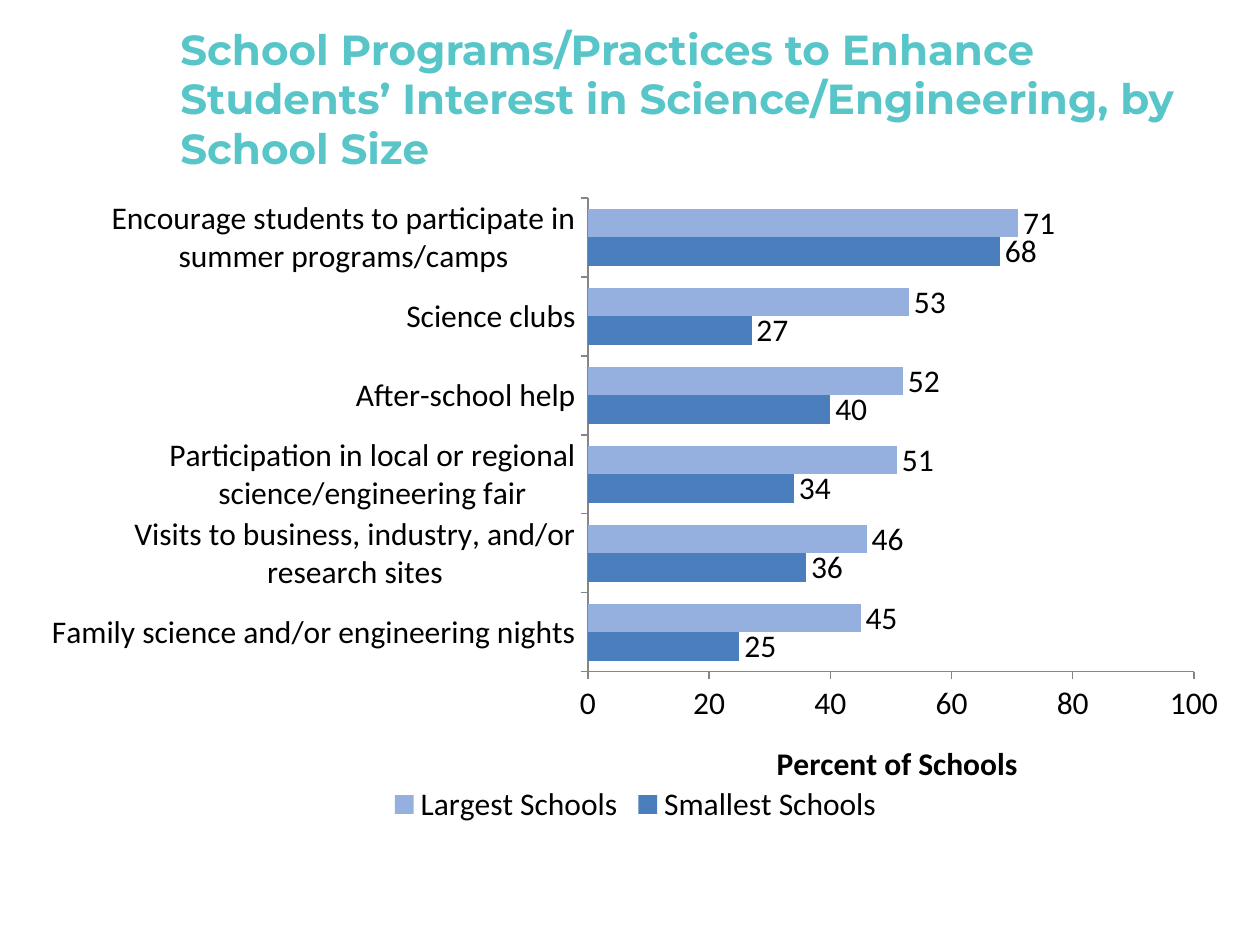
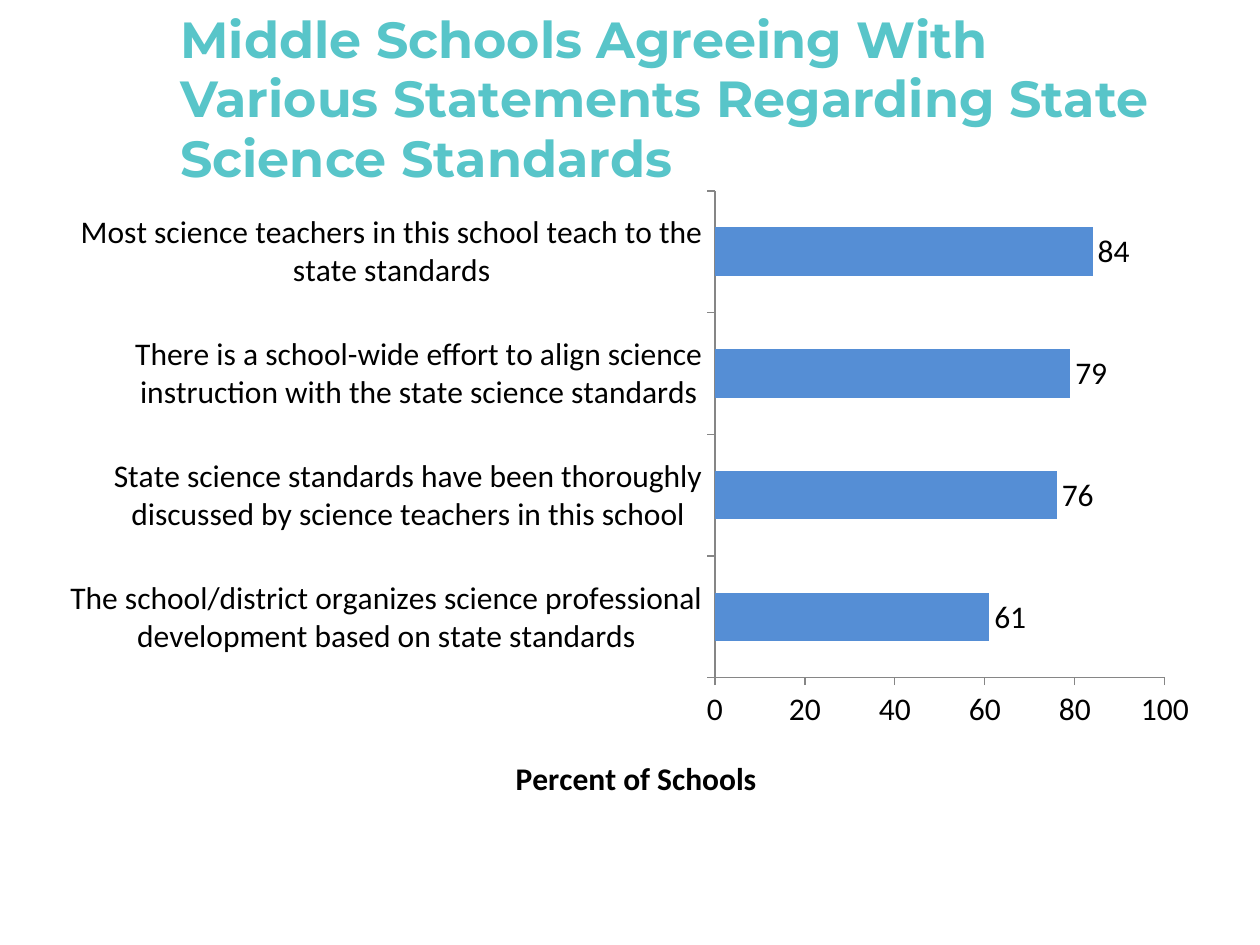
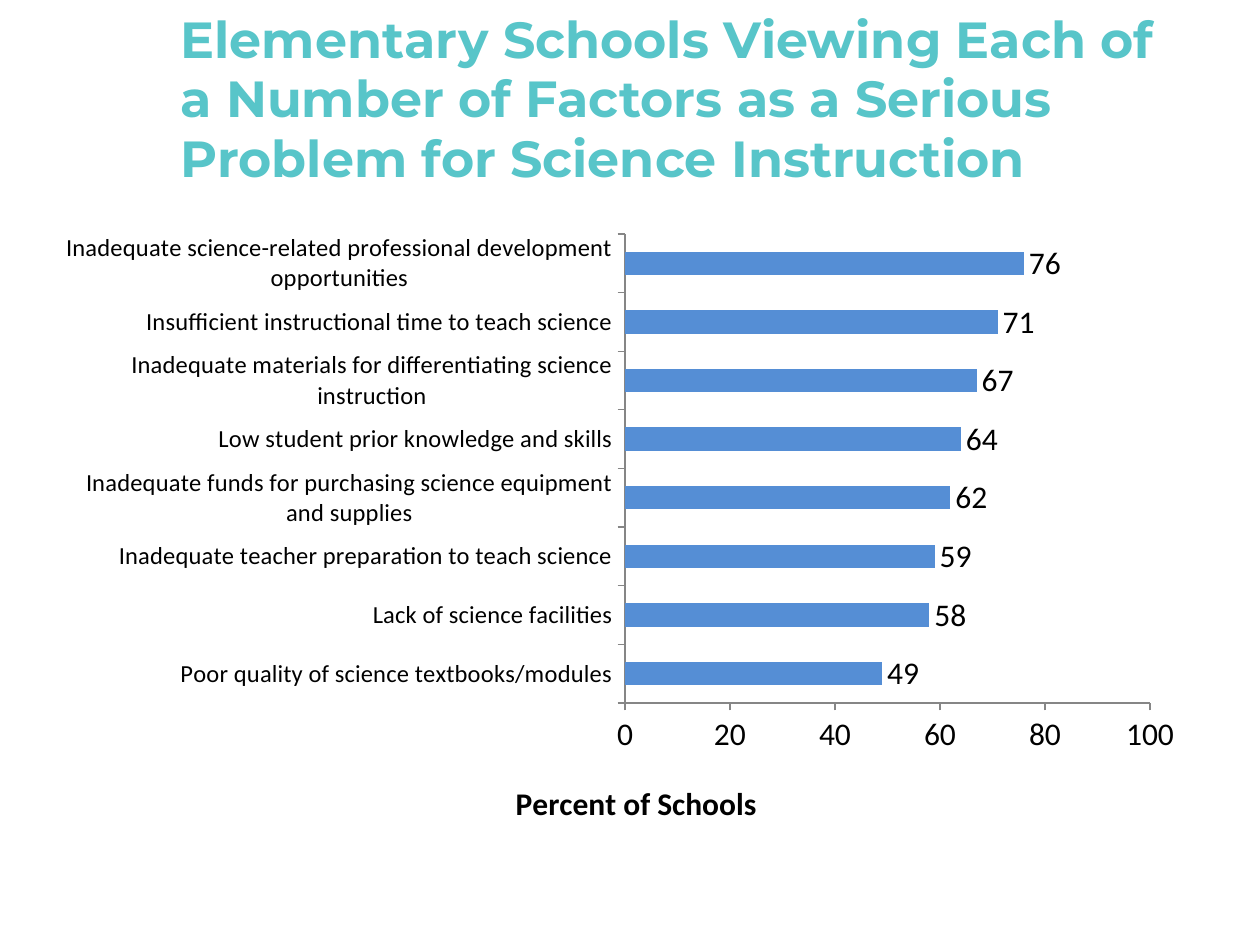
from pptx import Presentation
from pptx.chart.data import CategoryChartData
from pptx.dml.color import RGBColor
from pptx.enum.chart import (XL_CHART_TYPE as CT, XL_LABEL_POSITION as LP,
                             XL_LEGEND_POSITION as LEG, XL_TICK_MARK as TM)
from pptx.enum.text import MSO_ANCHOR
from pptx.oxml import parse_xml
from pptx.oxml.ns import nsdecls, qn
from pptx.util import Emu, Pt

TEAL = RGBColor(0x58, 0xC5, 0xC9)
BLACK = RGBColor(0x00, 0x00, 0x00)
GREY = RGBColor(0x86, 0x86, 0x86)
BLUE = RGBColor(0x55, 0x8E, 0xD5)
DARK_BLUE = RGBColor(0x4A, 0x7E, 0xBD)
LIGHT_BLUE = RGBColor(0x95, 0xB0, 0xDF)

TITLE_FONT, CHART_FONT = "Montserrat", "Calibri"
TITLE_BOX = (168, 21, 1029, 158)

SLIDES = [
    dict(
        title="School Programs/Practices to Enhance Students’ Interest in "
              "Science/Engineering, by School Size",
        title_size=24, box=(42, 179, 1187, 651), plot=(546, 19, 606, 474),
        axis_title_at=(729, 557), label_size=18, gap=75, legend=True,
        categories=[
            "Family science and/or engineering nights",
            "Visits to business, industry, and/or research sites",
            "Participation in local or regional science/engineering fair",
            "After-school help",
            "Science clubs",
            "Encourage students to participate in summer programs/camps",
        ],
        series=[("Smallest Schools", [25, 36, 34, 40, 27, 68], DARK_BLUE),
                ("Largest Schools", [45, 46, 51, 52, 53, 71], LIGHT_BLUE)],
    ),
    dict(
        title="Middle Schools Agreeing With Various Statements Regarding "
              "State Science Standards",
        title_size=29, box=(48, 179, 1166, 640), plot=(667, 12, 450, 487),
        axis_title_at=(462, 572), label_size=18, gap=150, legend=False,
        categories=[
            "The school/district organizes science professional development "
            "based on state standards",
            "State science standards have been thoroughly discussed by "
            "science teachers in this school",
            "There is a school-wide effort to align science instruction with "
            "the state science standards",
            "Most science teachers in this school teach to the state standards",
        ],
        series=[("Series 1", [61, 76, 79, 84], BLUE)],
    ),
    dict(
        title="Elementary Schools Viewing Each of a Number of Factors as a "
              "Serious Problem for Science Instruction",
        title_size=29, box=(63, 221, 1134, 624), plot=(562, 13, 525, 469),
        axis_title_at=(447, 555), label_size=14, gap=150, legend=False,
        categories=[
            "Poor quality of science textbooks/modules",
            "Lack of science facilities",
            "Inadequate teacher preparation to teach science",
            "Inadequate funds for purchasing science equipment and supplies",
            "Low student prior knowledge and skills",
            "Inadequate materials for differentiating science instruction",
            "Insufficient instructional time to teach science",
            "Inadequate science-related professional development opportunities",
        ],
        series=[("Series 1", [49, 58, 59, 62, 64, 67, 71, 76], BLUE)],
    ),
]


def px(n):
    """Turn pixels into EMU."""
    return Emu(round(n * 914400 / 126))


def set_font(font, name, size, color, bold=False):
    """Set the name, size, colour and weight of a font."""
    font.name, font.size, font.bold = name, Pt(size), bold
    font.color.rgb = color


def set_layout(parent, box, chart_box, target=""):
    """Fix a chart part at a px box measured from the chart's corner."""
    old = parent.find(qn("c:layout"))
    index = 0 if old is None else parent.index(old)
    if old is not None:
        parent.remove(old)
    modes = '<c:xMode val="edge"/><c:yMode val="edge"/>'
    values = "".join(f'<c:{key} val="{n / full:.4f}"/>'
                     for key, n, full in zip("xywh", box, chart_box[2:] * 2))
    parent.insert(index, parse_xml(
        f'<c:layout {nsdecls("c")}><c:manualLayout>{target}{modes}{values}'
        '</c:manualLayout></c:layout>'))


def add_title(s, box, text, size):
    """Add the slide title."""
    tf = s.shapes.add_textbox(*map(px, box)).text_frame
    tf.word_wrap = True
    tf.vertical_anchor = MSO_ANCHOR.MIDDLE
    p = tf.paragraphs[0]
    p.line_spacing = 0.98
    r = p.add_run()
    r.text = text
    set_font(r.font, TITLE_FONT, size, TEAL, True)


def style_axes(chart, label_size):
    """Style both axes and title the value axis."""
    for axis, size in ((chart.category_axis, label_size), (chart.value_axis, 18)):
        axis.has_major_gridlines = False
        axis.major_tick_mark, axis.minor_tick_mark = TM.OUTSIDE, TM.NONE
        axis.format.line.color.rgb = GREY
        axis.format.line.width = Pt(0.75)
        set_font(axis.tick_labels.font, CHART_FONT, size, BLACK)
    axis = chart.value_axis
    axis.minimum_scale, axis.maximum_scale, axis.major_unit = 0, 100, 20
    r = axis.axis_title.text_frame.paragraphs[0].add_run()
    r.text = "Percent of Schools"
    set_font(r.font, CHART_FONT, 18, BLACK, True)


def add_bar_chart(s, box, plot, axis_title_at, label_size, gap, legend,
                  categories, series):
    """Add a horizontal bar chart with value labels."""
    data = CategoryChartData()
    data.categories = categories
    for name, values, _ in series:
        data.add_series(name, values)
    chart = s.shapes.add_chart(CT.BAR_CLUSTERED, *map(px, box), data).chart
    chart.has_title = False
    set_font(chart.font, CHART_FONT, 18, BLACK)
    style_axes(chart, label_size)
    bars = chart.plots[0]
    bars.gap_width, bars.overlap, bars.vary_by_categories = gap, 0, False
    bars.has_data_labels = True
    labels = bars.data_labels
    labels.show_value, labels.position = True, LP.OUTSIDE_END
    set_font(labels.font, CHART_FONT, 18, BLACK)
    for bar, (_, _, color) in zip(bars.series, series):
        bar.format.fill.solid()
        bar.format.fill.fore_color.rgb = color
    chart.has_legend = legend
    if legend:
        chart.legend.position = LEG.BOTTOM
        chart.legend.include_in_layout = False
        set_font(chart.legend.font, CHART_FONT, 18, BLACK)
    set_layout(chart.value_axis.axis_title._element, axis_title_at, box)
    set_layout(chart._chartSpace.chart.plotArea, plot, box,
               '<c:layoutTarget val="inner"/>')


def add_chart_slide(prs, title, title_size, **chart):
    """Add a slide with a title above a bar chart."""
    s = prs.slides.add_slide(prs.slide_layouts[6])
    add_bar_chart(s, **chart)
    add_title(s, TITLE_BOX, title, title_size)


def main():
    """Build and save the slides."""
    prs = Presentation()
    prs.slide_width, prs.slide_height = px(1260), px(945)
    for content in SLIDES:
        add_chart_slide(prs, **content)
    prs.save("out.pptx")


if __name__ == "__main__":
    main()
